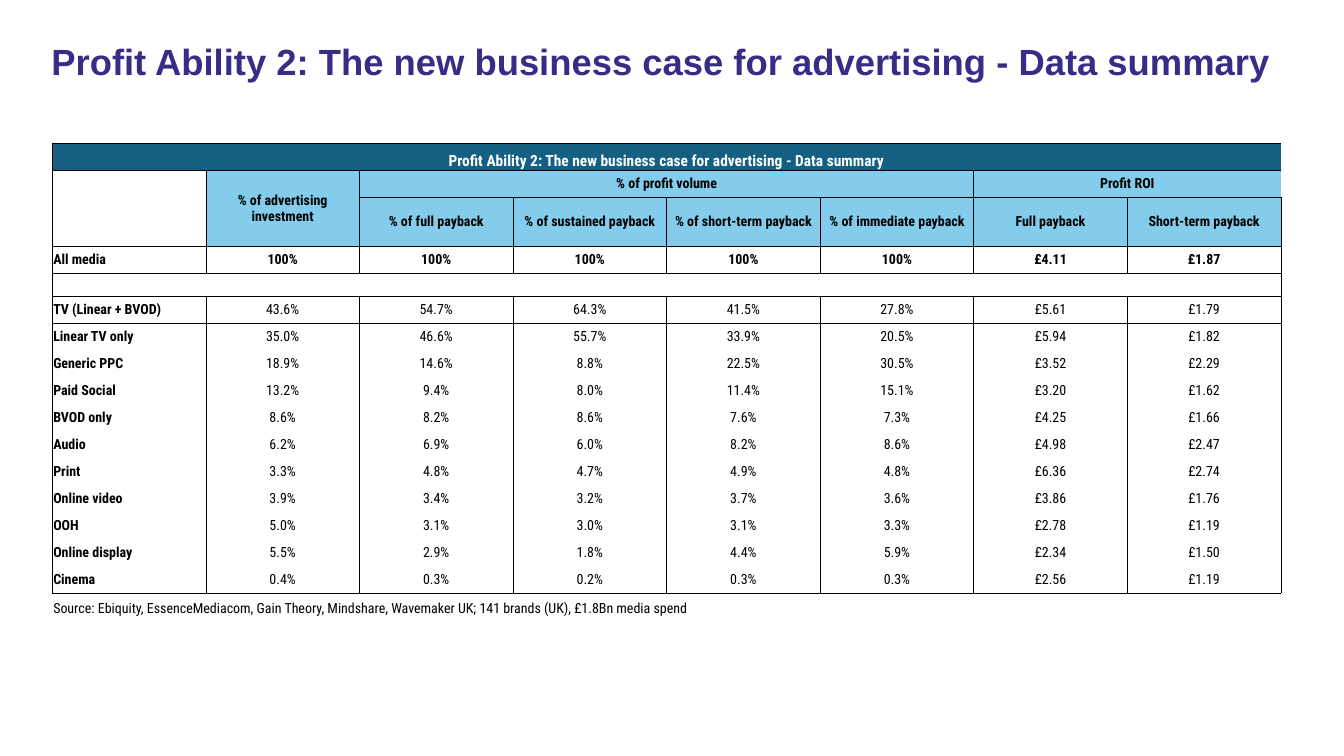
from dataclasses import dataclass
from itertools import product
from lxml.etree import SubElement
from pptx import Presentation
from pptx.dml.color import RGBColor
from pptx.enum.text import MSO_ANCHOR, PP_ALIGN
from pptx.oxml.ns import qn
from pptx.util import Inches, Pt


@dataclass(frozen=True)
class Theme:
    title_color: str = "372D87"
    banner_fill: str = "156082"
    header_fill: str = "83CCEB"
    white: str = "FFFFFF"
    black: str = "000000"
    title_font: str = "Arial"
    table_font: str = "Roboto Condensed"
    title_size: int = 26
    banner_size: int = 11
    table_size: int = 10
    border: float = 0.5
    cell_margin: float = 0.75
    table_style: str = "{2D5ABB26-0587-4C30-8999-92F81FD0307C}"


def apply(target, values):
    for name, value in values.items():
        setattr(target, name, value)


class Deck:
    COLUMNS, ROWS = 8.75, 28

    def __init__(self, theme):
        self.theme = theme
        self.prs = Presentation()
        apply(self.prs, {"slide_width": Inches(13.33), "slide_height": Inches(7.5)})
        self.slide = self.prs.slides.add_slide(self.prs.slide_layouts[6])

    def x(self, columns):
        return round(self.prs.slide_width * columns / self.COLUMNS)

    def y(self, rows):
        return round(self.prs.slide_height * rows / self.ROWS)

    def add_text(self, p, text, color, font, align=PP_ALIGN.LEFT):
        p.alignment = align
        r = p.add_run()
        r.text = text
        apply(r.font, font)
        r.font.color.rgb = RGBColor.from_string(color)

    def title(self, text, left, top, width, height):
        t = self.theme
        sp = self.slide.shapes.add_textbox(self.x(left), self.y(top), self.x(width), self.y(height))
        tf = sp.text_frame
        apply(tf, {"word_wrap": True, "vertical_anchor": MSO_ANCHOR.TOP})
        p = tf.paragraphs[0]
        p.line_spacing = 0.9
        self.add_text(p, text, t.title_color, {"name": t.title_font, "size": Pt(t.title_size), "bold": True})

    def table(self, left, top, heights, columns):
        frame = self.slide.shapes.add_table(
            len(heights), columns, self.x(left), self.y(top), self.x(columns), self.y(sum(heights)))
        table = frame.table
        apply(table, {"first_row": False, "horz_banding": False})
        frame._element.find(".//" + qn("a:tableStyleId")).text = self.theme.table_style
        for row, height in zip(table.rows, heights):
            row.height = self.y(height)
        for column in table.columns:
            column.width = self.x(1)
        margin = Pt(self.theme.cell_margin)
        for cell in table.iter_cells():
            apply(cell, {"margin_left": margin, "margin_right": margin, "margin_top": margin,
                         "margin_bottom": 0, "vertical_anchor": MSO_ANCHOR.MIDDLE})
            end = cell.text_frame.paragraphs[0]._p.get_or_add_endParaRPr()
            end.set("sz", str(self.theme.table_size * 100))
            cell.fill.background()
        return table

    def box(self, table, top, left, bottom, right):
        for row, col in product(range(top, bottom + 1), range(left, right + 1)):
            tcPr = table.cell(row, col)._tc.get_or_add_tcPr()
            edges = {"L": col == left, "R": col == right, "T": row == top, "B": row == bottom}
            sides = [side for side, outer in edges.items() if outer]
            for index, side in enumerate(sides):
                ln = tcPr.makeelement(qn(f"a:ln{side}"), {"w": str(Pt(self.theme.border))})
                fill = SubElement(ln, qn("a:solidFill"))
                SubElement(fill, qn("a:srgbClr"), val=self.theme.black)
                tcPr.insert(index, ln)

    def cell(self, table, row, col, text, fill=None, color=None, size=None, bold=False,
             align=PP_ALIGN.CENTER, anchor=MSO_ANCHOR.MIDDLE):
        t = self.theme
        cell = table.cell(row, col)
        cell.vertical_anchor = anchor
        if fill:
            cell.fill.solid()
            cell.fill.fore_color.rgb = RGBColor.from_string(fill)
        if text:
            self.add_text(cell.text_frame.paragraphs[0], text, color or t.black,
                          {"name": t.table_font, "size": Pt(size or t.table_size), "bold": bold}, align)


TITLE = "Profit Ability 2: The new business case for advertising - Data summary"
SOURCE = ("Source: Ebiquity, EssenceMediacom, Gain Theory, Mindshare, Wavemaker UK; "
          "141 brands (UK), £1.8Bn media spend")
HEADERS = [
    ("", 1, 0, 2, 0),
    ("% of advertising investment", 1, 1, 2, 1),
    ("% of profit volume", 1, 2, 1, 5),
    ("Profit ROI", 1, 6, 1, 7),
    ("% of full payback", 2, 2, 2, 2),
    ("% of sustained payback", 2, 3, 2, 3),
    ("% of short-term payback", 2, 4, 2, 4),
    ("% of immediate payback", 2, 5, 2, 5),
    ("Full payback", 2, 6, 2, 6),
    ("Short-term payback", 2, 7, 2, 7),
]
TOTAL = ("All media", 100, 100, 100, 100, 100, 4.11, 1.87)
MEDIA = [
    ("TV (Linear + BVOD)", 43.6, 54.7, 64.3, 41.5, 27.8, 5.61, 1.79),
    ("Linear TV only", 35.0, 46.6, 55.7, 33.9, 20.5, 5.94, 1.82),
    ("Generic PPC", 18.9, 14.6, 8.8, 22.5, 30.5, 3.52, 2.29),
    ("Paid Social", 13.2, 9.4, 8.0, 11.4, 15.1, 3.20, 1.62),
    ("BVOD only", 8.6, 8.2, 8.6, 7.6, 7.3, 4.25, 1.66),
    ("Audio", 6.2, 6.9, 6.0, 8.2, 8.6, 4.98, 2.47),
    ("Print", 3.3, 4.8, 4.7, 4.9, 4.8, 6.36, 2.74),
    ("Online video", 3.9, 3.4, 3.2, 3.7, 3.6, 3.86, 1.76),
    ("OOH", 5.0, 3.1, 3.0, 3.1, 3.3, 2.78, 1.19),
    ("Online display", 5.5, 2.9, 1.8, 4.4, 5.9, 2.34, 1.50),
    ("Cinema", 0.4, 0.3, 0.2, 0.3, 0.3, 2.56, 1.19),
]
COLUMNS = len(TOTAL)
LAST = COLUMNS - 1
TOTAL_ROW, GAP_ROW, MEDIA_ROW = 3, 4, 5
SOURCE_ROW = MEDIA_ROW + len(MEDIA)


def label(col, value):
    if col == 0:
        return value
    if col >= 6:
        return f"£{value:.2f}"
    return f"{value}%"


def fill_row(deck, table, row, values, bold=False):
    for col, value in enumerate(values):
        align = PP_ALIGN.CENTER if col else PP_ALIGN.LEFT
        deck.cell(table, row, col, label(col, value), bold=bold or col == 0, align=align)


def main():
    theme = Theme()
    deck = Deck(theme)
    deck.title(TITLE, 0.27, 1.46, 8.14, 4.18)
    heights = [1, 1, 1.81, 1, 0.86] + [1] * len(MEDIA) + [1.12]
    table = deck.table(0.34, 5.3, heights, COLUMNS)

    spans = [(0, 0, 0, LAST), (SOURCE_ROW, 0, SOURCE_ROW, LAST)] + [header[1:] for header in HEADERS]
    for top, left, bottom, right in spans:
        if (top, left) != (bottom, right):
            table.cell(top, left).merge(table.cell(bottom, right))
    boxes = [(0, 0, 0, LAST), (GAP_ROW, 0, GAP_ROW, LAST)] + [header[1:] for header in HEADERS]
    for col in range(COLUMNS):
        boxes += [(TOTAL_ROW, col, TOTAL_ROW, col), (MEDIA_ROW, col, SOURCE_ROW - 1, col)]
    for edges in boxes:
        deck.box(table, *edges)

    deck.cell(table, 0, 0, TITLE, theme.banner_fill, theme.white, theme.banner_size,
              bold=True, anchor=MSO_ANCHOR.BOTTOM)
    for text, row, col, *_ in HEADERS:
        deck.cell(table, row, col, text, theme.header_fill if text else None, bold=True)
    fill_row(deck, table, TOTAL_ROW, TOTAL, bold=True)
    for row, values in enumerate(MEDIA, MEDIA_ROW):
        fill_row(deck, table, row, values)
    deck.cell(table, SOURCE_ROW, 0, SOURCE, align=PP_ALIGN.LEFT)
    deck.prs.save("out.pptx")


if __name__ == "__main__":
    main()
